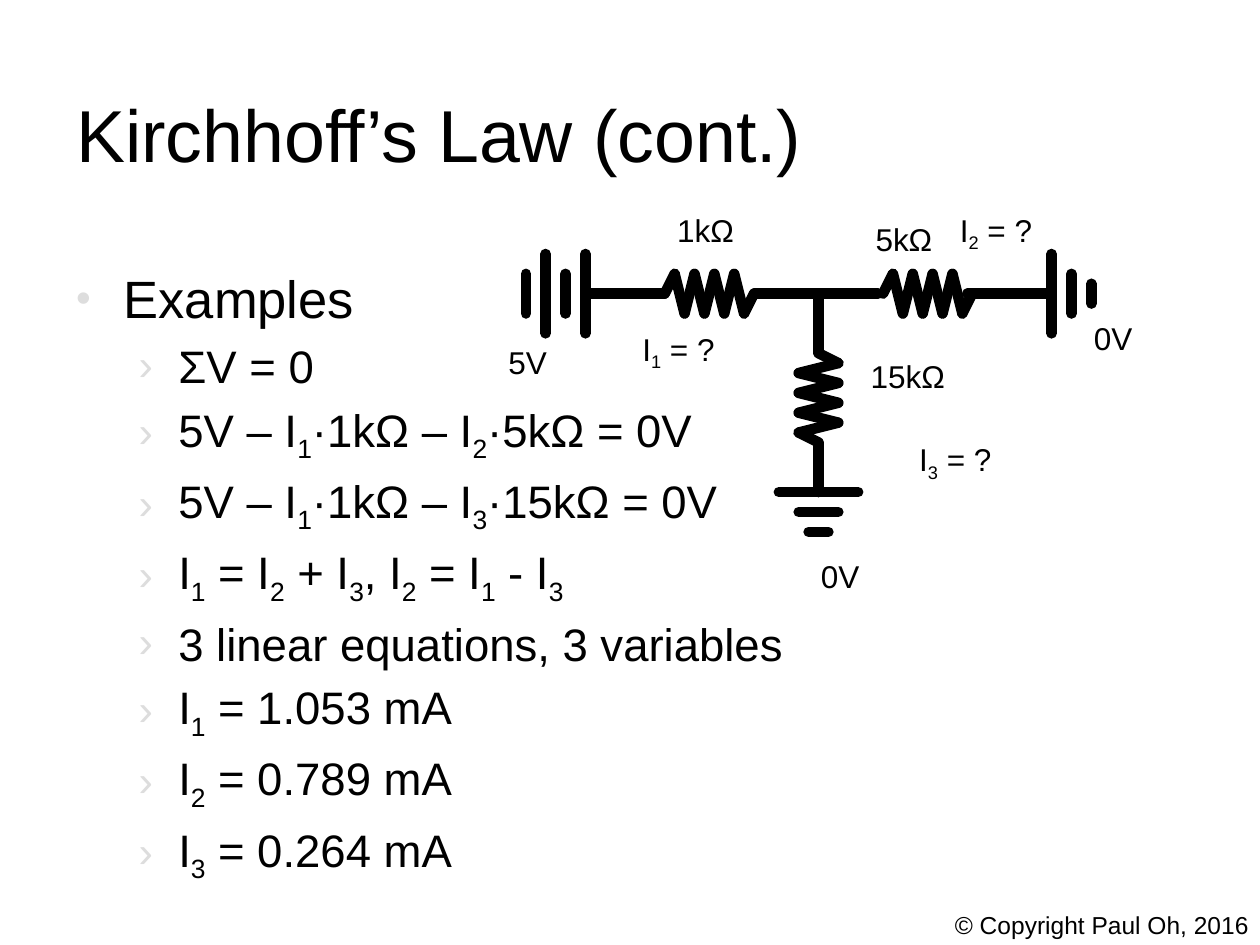
from itertools import pairwise

from lxml.etree import SubElement as Sub
from pptx import Presentation
from pptx.dml.color import RGBColor as Rgb
from pptx.enum.shapes import MSO_CONNECTOR as Conn
from pptx.enum.text import MSO_ANCHOR as Anchor, MSO_AUTO_SIZE as Auto, PP_ALIGN as Align
from pptx.oxml.ns import qn
from pptx.util import Inches, Pt

PX = 7200
HUES = {"ink": "000000", "mark": "DDDDDD"}
FONT = "Arial"
TITLE = "Kirchhoff’s Law (cont.)"
HEAD = "Examples"
STEPS = [
    "ΣV = 0",
    "5V – I_1_·1kΩ – I_2_·5kΩ = 0V",
    "5V – I_1_·1kΩ – I_3_·15kΩ = 0V",
    "I_1_ = I_2_ + I_3_, I_2_ = I_1_ - I_3_",
    "3 linear equations, 3 variables",
    "I_1_ = 1.053 mA",
    "I_2_ = 0.789 mA",
    "I_3_ = 0.264 mA",
]
RAIL, NODE = 296, 825
PLATES = [(530, 20), (550, 40), (570, 20), (590, 40), (1060, 40), (1080, 20), (1100, 10)]
BARS = [(496, 40), (516, 20), (536, 10)]
WIRES = [
    (590, RAIL, 670, RAIL),
    (760, RAIL, 885, RAIL),
    (975, RAIL, 1055, RAIL),
    (NODE, RAIL, NODE, 356),
    (NODE, 446, NODE, 496),
]
LABELS = [
    ("5V", 500, 340, 65),
    ("0V", 1090, 315, 65),
    ("0V", 815, 555, 65),
    ("1kΩ", 670, 206, 84),
    ("5kΩ", 870, 216, 84),
    ("15kΩ", 865, 354, 102),
    ("I_1_ = ?", 635, 326, 100),
    ("I_2_ = ?", 955, 206, 100),
    ("I_3_ = ?", 914, 437, 100),
]


class Board:
    """Holds the style and the current slide."""

    def __init__(self, deck):
        self.slide = deck.slides.add_slide(deck.slide_layouts[1])
        self.shapes = self.slide.shapes

    def fill(self, para, text, size):
        for spot, part in enumerate(text.split("_")):
            run = para.add_run()
            run.text = part
            run.font.name, run.font.size = FONT, Pt(size)
            run.font.color.rgb = Rgb.from_string(HUES["ink"])
            if spot % 2:
                run.font._element.set("baseline", "-25000")

    def place(self, shape, *box):
        shape.left, shape.top, shape.width, shape.height = (n * PX for n in box)
        shape.text_frame.auto_size = Auto.NONE
        return shape.text_frame

    def title(self, text, *box):
        frame = self.place(self.shapes.title, *box)
        frame.vertical_anchor = Anchor.MIDDLE
        frame.paragraphs[0].alignment = Align.LEFT
        self.fill(frame.paragraphs[0], text, 42)

    def bullet(self, para, sign, share, left, hang):
        prop = para._p.get_or_add_pPr()
        prop.set("marL", str(left * PX))
        prop.set("indent", str(-hang * PX))
        tint = Sub(prop, qn("a:buClr"))
        Sub(tint, qn("a:srgbClr"), val=HUES["mark"])
        Sub(prop, qn("a:buSzPct"), val=str(share * 1000))
        Sub(prop, qn("a:buFont"), typeface=FONT)
        Sub(prop, qn("a:buChar"), char=sign)

    def body(self, head, items, *box):
        frame = self.place(self.slide.placeholders[1], *box)
        first = frame.paragraphs[0]
        self.bullet(first, "•", 80, 48, 48)
        self.fill(first, head, 30)
        for item in items:
            para = frame.add_paragraph()
            para.level = 1
            self.bullet(para, "›", 95, 103, 40)
            self.fill(para, item, 26)

    def label(self, text, left, top, width, height=51, size=18):
        box = self.shapes.add_textbox(left * PX, top * PX, width * PX, height * PX)
        box.text_frame.word_wrap = False
        self.fill(box.text_frame.paragraphs[0], text, size)

    def line(self, *ends, home=None):
        wire = (home or self.shapes).add_connector(Conn.STRAIGHT, *(n * PX for n in ends))
        wire.line.width = Pt(6)
        wire.line.color.rgb = Rgb.from_string(HUES["ink"])
        wire.line._get_or_add_ln().set("cap", "rnd")
        Sub(wire._element.spPr, qn("a:effectLst"))

    def coil(self, left, top, down=False):
        home = self.shapes.add_group_shape().shapes
        swing = [0] + [-20, 20] * 4 + [0]
        spots = [
            (left - off, top + 10 * step) if down else (left + 10 * step, top + off)
            for step, off in enumerate(swing)
        ]
        for start, end in pairwise(spots):
            self.line(*start, *end, home=home)


def main():
    deck = Presentation()
    deck.slide_width, deck.slide_height = Inches(10), Inches(7.5)
    board = Board(deck)
    board.title(TITLE, 64, 37, 1143, 194)
    board.body(HEAD, STEPS, 64, 262, 771, 635)
    for mid, half in PLATES:
        board.line(mid, RAIL - half, mid, RAIL + half)
    for row, half in BARS:
        board.line(NODE - half, row, NODE + half, row)
    for ends in WIRES:
        board.line(*ends)
    board.coil(670, RAIL)
    board.coil(890, RAIL)
    board.coil(NODE, 356, down=True)
    for item in LABELS:
        board.label(*item)
    board.label("© Copyright Paul Oh, 2016", 950, 911, 324, 43, 14)
    deck.save("out.pptx")


if __name__ == "__main__":
    main()
